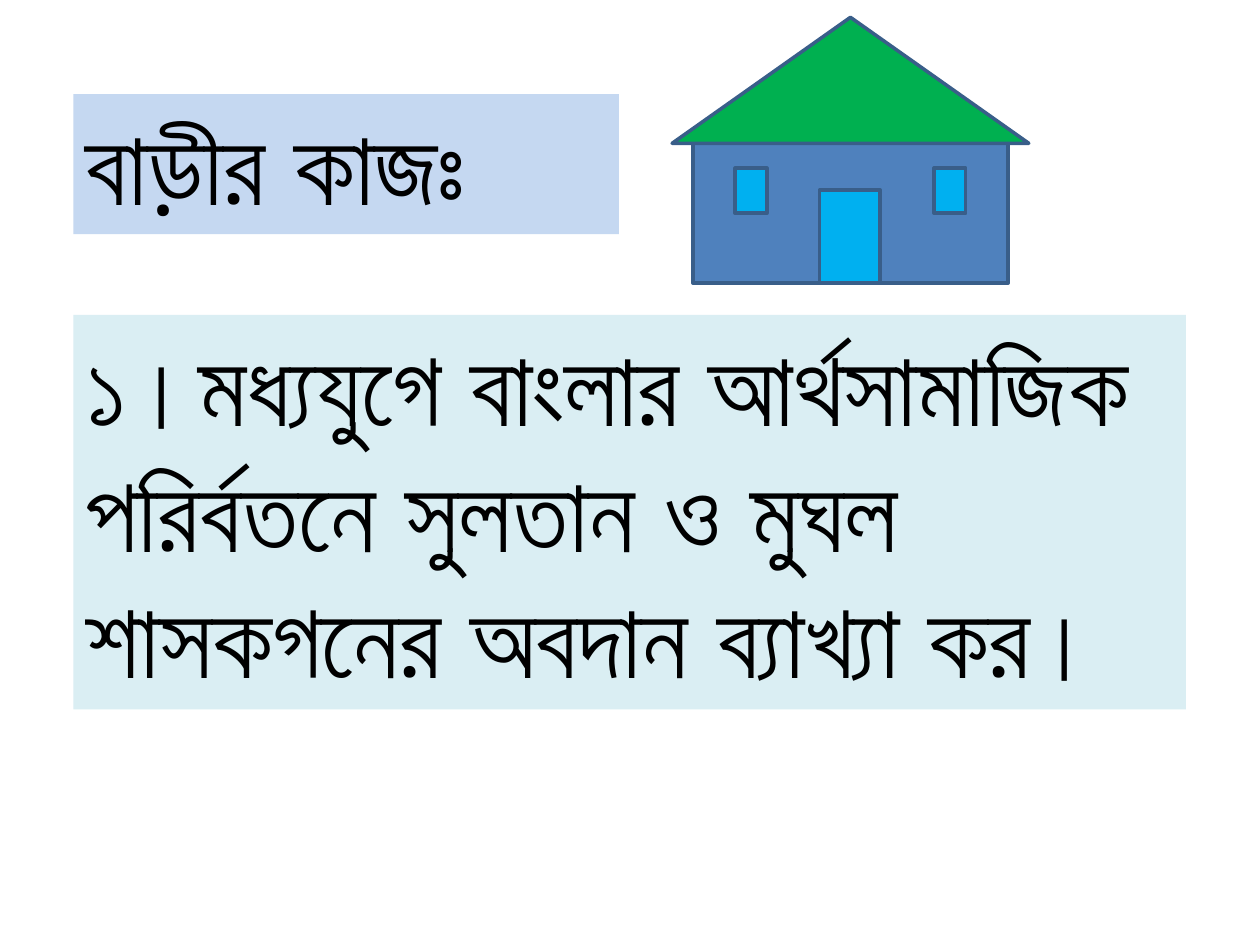
from dataclasses import dataclass

from lxml.etree import SubElement
from pptx import Presentation
from pptx.dml.color import RGBColor
from pptx.enum.shapes import MSO_SHAPE
from pptx.enum.text import MSO_ANCHOR, MSO_AUTO_SIZE
from pptx.oxml.ns import qn
from pptx.util import Cm, Pt


@dataclass(frozen=True)
class Theme:
    font: str = "Arial"
    text_size: int = 60
    text: str = "000000"
    heading_fill: str = "C5D8F1"
    task_fill: str = "DAEEF3"
    wall: str = "4F81BD"
    roof: str = "00B050"
    opening: str = "00B0F0"
    outline: str = "395E89"
    outline_width: int = 2


THEME = Theme()


def add_text_panel(slide, box, wording, fill):
    """Filled text box; box is left, top, width, height in cm."""
    panel = slide.shapes.add_textbox(*map(Cm, box))
    panel.fill.solid()
    panel.fill.fore_color.rgb = RGBColor.from_string(fill)
    frame = panel.text_frame
    frame_format = {
        "word_wrap": True,
        "auto_size": MSO_AUTO_SIZE.SHAPE_TO_FIT_TEXT,
        "vertical_anchor": MSO_ANCHOR.TOP,
    }
    for name, value in frame_format.items():
        setattr(frame, name, value)

    run = frame.paragraphs[0].add_run()
    run.text = wording
    run.font.color.rgb = RGBColor.from_string(THEME.text)
    for name, value in {"name": THEME.font, "size": Pt(THEME.text_size)}.items():
        setattr(run.font, name, value)
    # Bengali takes its typeface from the complex-script font
    SubElement(run.font._element, qn("a:cs"), typeface=THEME.font)


def add_house(slide, box):
    """House with parts placed relative to its box, in cm."""
    left, top, width, height = box
    roof_height = 2.54
    eave = 0.42
    door_left, door_width, door_height = 2.97, 1.22, 1.88
    window_inset, window_top, window_width, window_height = 1.27, 3.04, 0.64, 0.91

    # Walls, roof and door
    parts = [
        (MSO_SHAPE.RECTANGLE, THEME.wall,
         (eave, roof_height, width - 2 * eave, height - roof_height)),
        (MSO_SHAPE.ISOSCELES_TRIANGLE, THEME.roof, (0, 0, width, roof_height)),
        (MSO_SHAPE.RECTANGLE, THEME.opening,
         (door_left, height - door_height, door_width, door_height)),
    ]
    # Windows, mirrored about the middle
    for window_left in (window_inset, width - window_inset - window_width):
        parts.append((MSO_SHAPE.RECTANGLE, THEME.opening,
                      (window_left, window_top, window_width, window_height)))

    for outline, fill, (x, y, w, h) in parts:
        part = slide.shapes.add_shape(
            outline, Cm(left + x), Cm(top + y), Cm(w), Cm(h))
        part.shadow.inherit = False
        part.fill.solid()
        part.fill.fore_color.rgb = RGBColor.from_string(fill)
        part.line.color.rgb = RGBColor.from_string(THEME.outline)
        part.line.width = Pt(THEME.outline_width)


def main():
    deck = Presentation()
    deck.slide_width, deck.slide_height = Cm(25.4), Cm(19.05)
    slide = deck.slides.add_slide(deck.slide_layouts[6])

    # Heading and homework task
    add_text_panel(slide, (1.48, 1.9, 11, 2.82), "বাড়ীর কাজঃ", THEME.heading_fill)
    add_text_panel(
        slide, (1.48, 6.35, 22.43, 7.95),
        "১।মধ্যযুগে বাংলার আর্থসামাজিক পরির্বতনে সুলতান ও মুঘল "
        "শাসকগনের অবদান ব্যাখ্যা কর।",
        THEME.task_fill)

    # House drawing
    add_house(slide, (13.55, 0.35, 7.19, 5.36))

    deck.save("out.pptx")


if __name__ == "__main__":
    main()
